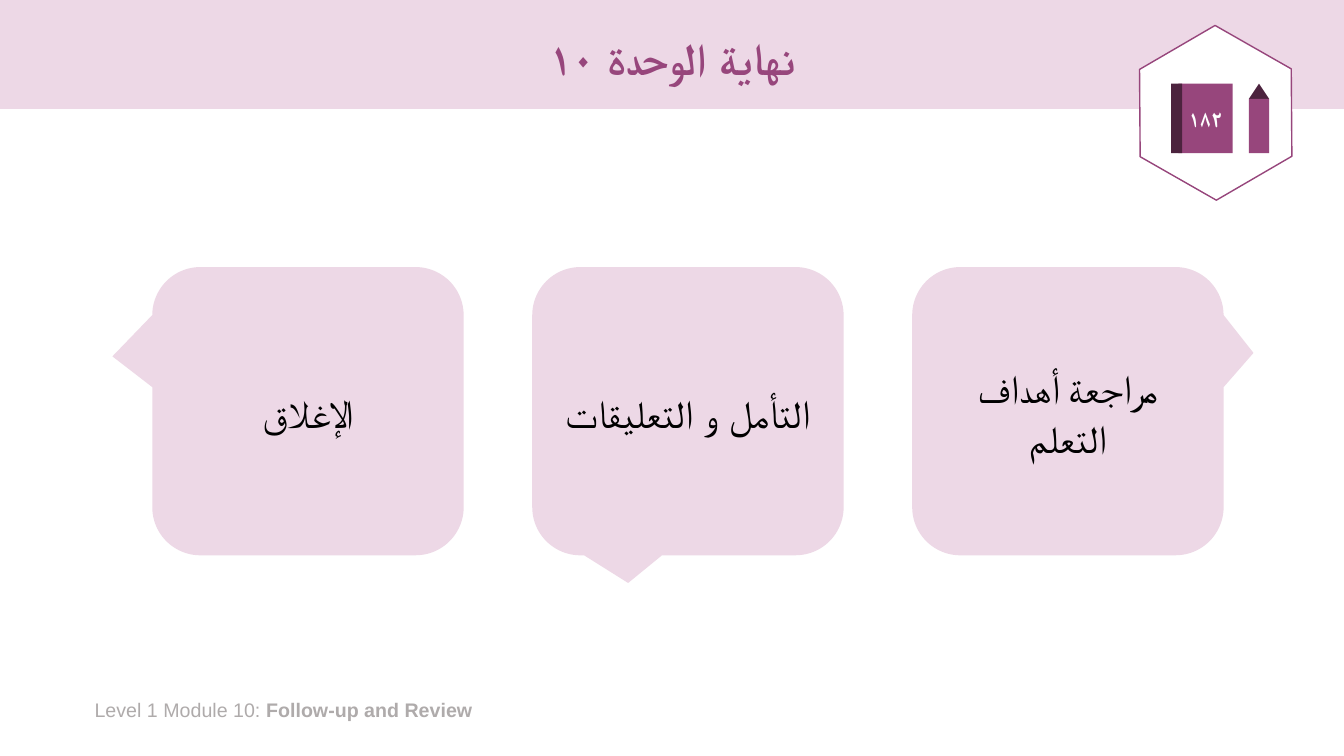
from typing import Any, NamedTuple

from lxml.etree import SubElement
from pptx import Presentation
from pptx.dml.color import RGBColor
from pptx.enum.shapes import MSO_SHAPE as SHAPE
from pptx.enum.text import MSO_ANCHOR, PP_ALIGN
from pptx.oxml.ns import qn
from pptx.util import Inches, Pt

PINK = RGBColor(0xED, 0xD8, 0xE6)
PLUM = RGBColor(0x97, 0x46, 0x7C)
DARK = RGBColor(0x4C, 0x23, 0x3E)
GREY = RGBColor(0xAF, 0xAB, 0xAB)
WHITE = RGBColor(0xFF, 0xFF, 0xFF)
BLACK = RGBColor(0x00, 0x00, 0x00)
FONT = "Arial"
WIDTH, HEIGHT = Inches(13.33), Inches(7.5)


class Box(NamedTuple):
    """Left, top, width and height in percent of the slide."""
    x: float
    y: float
    w: float
    h: float

    def place(self) -> tuple[int, int, int, int]:
        return (int(WIDTH * self.x / 100), int(HEIGHT * self.y / 100),
                int(WIDTH * self.w / 100), int(HEIGHT * self.h / 100))


class Part(NamedTuple):
    kind: Any
    box: Box
    fill: RGBColor


class Card(NamedTuple):
    text: str
    tip: tuple[float, float]


BAND = Part(SHAPE.RECTANGLE, Box(0, 0, 100, 14.4), PINK)
TITLE = Box(6.9, 1.73, 86.25, 12.67)
FOOTER = Box(6.3, 91.6, 34.13, 4.53)
FIRST, STEP = Box(11.33, 35.33, 23.17, 38.13), 28.27
CARDS = [
    Card("الإغلاق", (-0.628, -0.19)),
    Card("التأمل و التعليقات", (-0.192, 0.596)),
    Card("مراجعة أهداف التعلم", (0.596, -0.202)),
]
BADGE = Part(SHAPE.HEXAGON, Box(83.93, 4.93, 13.05, 20), WHITE)
BOOK = Part(SHAPE.RECTANGLE, Box(87.67, 11.07, 4.05, 9.2), PLUM)
ICON = [
    Part(SHAPE.RECTANGLE, Box(87.15, 11.07, 0.82, 9.2), DARK),
    Part(SHAPE.ISOSCELES_TRIANGLE, Box(92.93, 11.07, 1.5, 2), DARK),
    Part(SHAPE.RECTANGLE, Box(92.93, 13.07, 1.5, 7.2), PLUM),
]


def style(item: Any, form: dict[str, Any]) -> None:
    for name, value in form.items():
        setattr(item, name, value)


def draw(slide: Any, part: Part) -> Any:
    shape = slide.shapes.add_shape(part.kind, *part.box.place())
    shape.shadow.inherit = False
    shape.fill.solid()
    shape.fill.fore_color.rgb = part.fill
    shape.line.fill.background()
    return shape


def add_run(para: Any, text: str, size: int, ink: RGBColor, bold: bool) -> None:
    run = para.add_run()
    run.text = text
    style(run.font, {"size": Pt(size), "name": FONT, "bold": bold})
    run.font.color.rgb = ink
    SubElement(run.font._element, qn("a:cs"), typeface=FONT)


def write(shape: Any, text: str, size: int, ink: RGBColor, bold: bool,
          wrap: bool = True, **form: Any) -> None:
    """Put one centred right-to-left paragraph in the shape."""
    frame = shape.text_frame
    style(frame, {"word_wrap": wrap, "vertical_anchor": MSO_ANCHOR.MIDDLE})
    para = frame.paragraphs[0]
    style(para, {"alignment": PP_ALIGN.CENTER, **form})
    para._p.get_or_add_pPr().set("rtl", "1")
    add_run(para, text, size, ink, bold)


def add_cards(slide: Any) -> None:
    for col, card in enumerate(CARDS):
        box = FIRST._replace(x=FIRST.x + col * STEP)
        shape = draw(slide, Part(SHAPE.ROUNDED_RECTANGULAR_CALLOUT, box, PINK))
        for spot, value in enumerate((*card.tip, 0.167)):
            shape.adjustments[spot] = value
        write(shape, card.text, 28, BLACK, False,
              line_spacing=1.07, space_after=Pt(8))


def add_badge(slide: Any) -> None:
    badge = draw(slide, BADGE)
    badge.rotation = 29.7
    badge.adjustments[0] = 0.29
    badge.line.color.rgb = PLUM
    badge.line.width = Pt(1)
    write(draw(slide, BOOK), "١٨٢", 16, WHITE, True, wrap=False)
    for part in ICON:
        draw(slide, part)


def add_footer(slide: Any) -> None:
    frame = slide.shapes.add_textbox(*FOOTER.place()).text_frame
    frame.word_wrap = True
    para = frame.paragraphs[0]
    add_run(para, "Level 1 Module 10: ", 14, GREY, False)
    add_run(para, "Follow-up and Review", 14, GREY, True)


def main() -> None:
    deck = Presentation()
    style(deck, {"slide_width": WIDTH, "slide_height": HEIGHT})
    slide = deck.slides.add_slide(deck.slide_layouts[6])
    draw(slide, BAND)
    add_footer(slide)
    title = slide.shapes.add_textbox(*TITLE.place())
    write(title, "نهاية الوحدة ١٠", 32, PLUM, True, line_spacing=0.9)
    add_cards(slide)
    add_badge(slide)
    deck.save("out.pptx")


if __name__ == "__main__":
    main()
